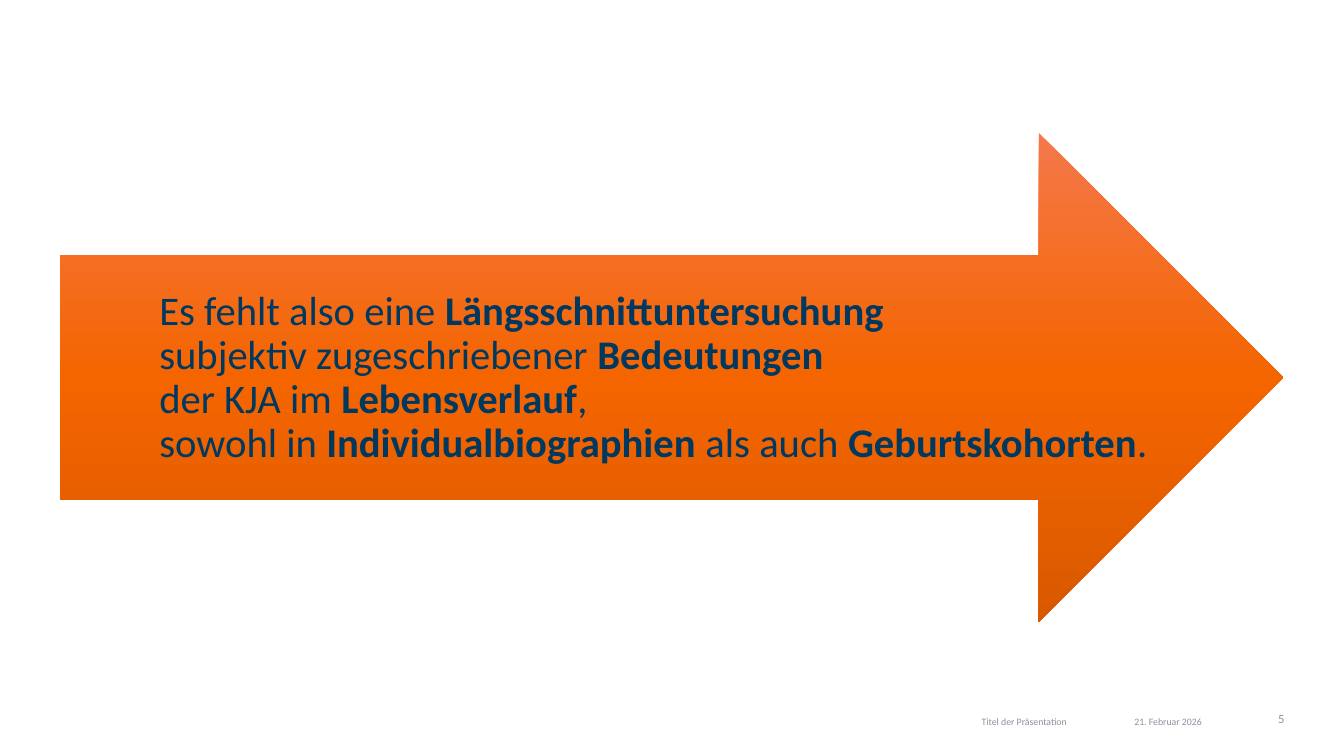
import copy

import pptx
import pptx.dml.color
import pptx.enum.shapes
import pptx.enum.text
import pptx.oxml.ns
import pptx.util

Inches = pptx.util.Inches
Pt = pptx.util.Pt
RGBColor = pptx.dml.color.RGBColor
ALIGN = pptx.enum.text.PP_ALIGN
ANCHOR = pptx.enum.text.MSO_ANCHOR

FONT = "Calibri"
GREY = RGBColor(0x8C, 0x91, 0x9D)
NAVY = RGBColor(0x00, 0x38, 0x5F)
LIGHT = RGBColor(0xF5, 0x78, 0x4B)
ORANGE = RGBColor(0xF4, 0x65, 0x00)
DARK = RGBColor(0xD9, 0x59, 0x00)

# Asterisks enclose the bold words
THESIS = [
    "Es fehlt also eine *Längsschnittuntersuchung*",
    "subjektiv zugeschriebener *Bedeutungen*",
    "der KJA im *Lebensverlauf*,",
    "sowohl in *Individualbiographien* als auch *Geburtskohorten*.",
]


def add_text(slide, lines, box, size, color, align=ALIGN.LEFT,
             anchor=ANCHOR.TOP, inset=(0, 0, 0, 0), after=6):
    """Add one paragraph, with a line break between the lines."""
    shape = slide.shapes.add_textbox(*map(Inches, box))
    frame = shape.text_frame
    frame.word_wrap = True
    frame.vertical_anchor = anchor
    (frame.margin_left, frame.margin_top,
     frame.margin_right, frame.margin_bottom) = map(Inches, inset)
    para = frame.paragraphs[0]
    para.alignment = align
    para.line_spacing = 0.9
    para.space_after = Pt(after)
    for row, line in enumerate(lines):
        if row:
            para.add_line_break()
        for part, words in enumerate(line.split("*")):
            if words:
                run = para.add_run()
                run.text = words
                run.font.name = FONT
                run.font.size = Pt(size)
                run.font.bold = part % 2 == 1
                run.font.color.rgb = color


def add_arrow(slide, box, colors):
    """Add a right arrow shaded evenly from top to bottom."""
    arrow = slide.shapes.add_shape(
        pptx.enum.shapes.MSO_SHAPE.RIGHT_ARROW, *map(Inches, box))
    arrow.shadow.inherit = False
    arrow.line.fill.background()
    arrow.fill.gradient()
    arrow.fill.gradient_angle = 270
    # A new gradient has two stops; the middle one is added here
    stops = arrow._element.spPr.find(".//" + pptx.oxml.ns.qn("a:gsLst"))
    stops.insert(1, copy.deepcopy(stops[0]))
    for index, color in enumerate(colors):
        stop = arrow.fill.gradient_stops[index]
        stop.position = index / (len(colors) - 1)
        stop.color.rgb = color


def main():
    deck = pptx.Presentation()
    deck.slide_width = Inches(13.33)
    deck.slide_height = Inches(7.5)
    slide = deck.slides.add_slide(deck.slide_layouts[6])

    # Footer
    add_text(slide, ["21. Februar 2026"], (10.76, 7.06, 1.65, 0.16), 7, GREY,
             align=ALIGN.CENTER, inset=(0, 0.05, 0, 0))
    add_text(slide, ["Titel der Präsentation"], (5.88, 7.06, 4.72, 0.16), 7,
             GREY, align=ALIGN.RIGHT, inset=(0, 0.05, 0.02, 0))
    add_text(slide, ["5"], (12.42, 7.06, 0.32, 0.16), 9, GREY,
             align=ALIGN.RIGHT, inset=(0, 0.01, 0, 0))

    # Arrow with the thesis
    add_arrow(slide, (0.6, 1.32, 12.13, 4.85), (LIGHT, ORANGE, DARK))
    add_text(slide, THESIS, (1.58, 2.54, 9.94, 2.43), 29, NAVY,
             anchor=ANCHOR.MIDDLE, inset=(0, 0.32, 0, 0.32), after=10)

    deck.save("out.pptx")


if __name__ == "__main__":
    main()
